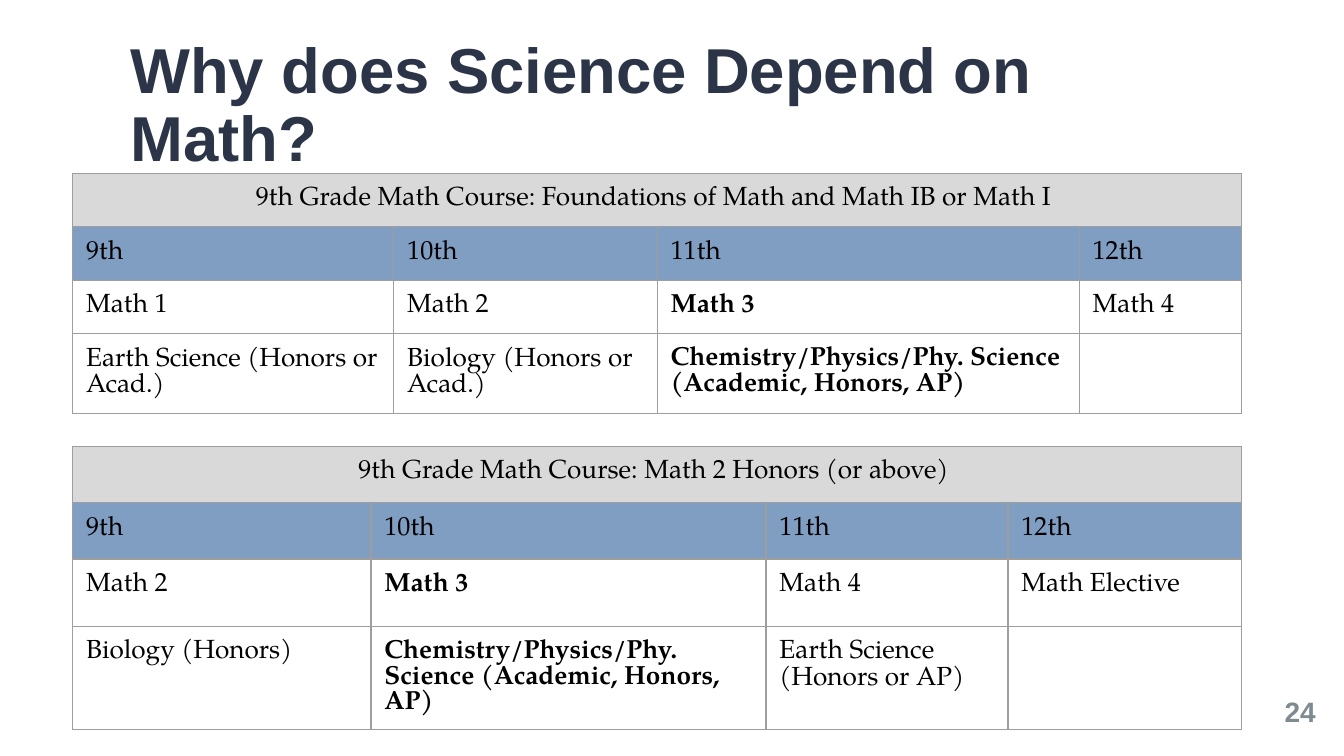
from dataclasses import dataclass

from lxml.etree import SubElement
from pptx import Presentation
from pptx.dml.color import RGBColor
from pptx.enum.text import MSO_ANCHOR, MSO_AUTO_SIZE, PP_ALIGN
from pptx.oxml.ns import qn
from pptx.util import Inches, Pt


@dataclass(frozen=True)
class Theme:
    heading_font: str = "Arial"
    table_font: str = "TeX Gyre Pagella"
    title_size: int = 34
    number_size: int = 15
    table_size: int = 14
    border_width: float = 0.75
    title: str = "2B3547"
    number: str = "7F8B91"
    text: str = "000000"
    band: str = "D9D9D9"
    grades: str = "809DC2"
    border: str = "9E9E9E"


THEME = Theme()
GRADES = ["9th", "10th", "11th", "12th"]
CHEMISTRY = "Chemistry/Physics/Phy. Science (Academic, Honors, AP)"


def add_run(p, text, font, size, color, bold=False):
    r = p.add_run()
    r.text = text
    r.font.name = font
    r.font.size = Pt(size)
    r.font.bold = bold
    r.font.color.rgb = RGBColor.from_string(color)


def prepare_frame(tf):
    tf.margin_left = tf.margin_right = tf.margin_top = tf.margin_bottom = 0
    tf.word_wrap = True
    tf.auto_size = MSO_AUTO_SIZE.NONE
    tf.vertical_anchor = MSO_ANCHOR.MIDDLE
    return tf.paragraphs[0]


def add_title(s, box, text):
    sp = s.shapes.title
    sp.left, sp.top, sp.width, sp.height = map(Inches, box)
    p = prepare_frame(sp.text_frame)
    p.alignment = PP_ALIGN.LEFT
    p.line_spacing = 0.9
    add_run(p, text, THEME.heading_font, THEME.title_size, THEME.title, True)


def add_page_number(s, box, text):
    sp = s.shapes.add_textbox(*map(Inches, box))
    p = prepare_frame(sp.text_frame)
    p.alignment = PP_ALIGN.RIGHT
    add_run(p, text, THEME.heading_font, THEME.number_size, THEME.number, True)


def add_borders(cell):
    tcPr = cell._tc.get_or_add_tcPr()
    for side in ("a:lnL", "a:lnR", "a:lnT", "a:lnB"):
        ln = SubElement(tcPr, qn(side), w=str(Pt(THEME.border_width)))
        fill = SubElement(ln, qn("a:solidFill"))
        SubElement(fill, qn("a:srgbClr"), val=THEME.border)


def format_cell(cell, text, fill=None, bold=False, align=PP_ALIGN.LEFT):
    cell.margin_left = cell.margin_right = Inches(0.1)
    cell.margin_top = cell.margin_bottom = Inches(0.1)
    add_borders(cell)
    if fill:
        cell.fill.solid()
        cell.fill.fore_color.rgb = RGBColor.from_string(fill)
    else:
        cell.fill.background()
    p = cell.text_frame.paragraphs[0]
    p.alignment = align
    if text:
        add_run(p, text, THEME.table_font, THEME.table_size, THEME.text, bold)
    else:
        p.font.size = Pt(THEME.table_size)


def add_course_table(s, left, top, widths, heights, heading, courses, bold_column):
    box = map(Inches, (left, top, sum(widths), sum(heights)))
    table = s.shapes.add_table(len(heights), len(widths), *box).table
    table.first_row = table.horz_banding = False
    for column, width in zip(table.columns, widths):
        column.width = Inches(width)
    for row, height in zip(table.rows, heights):
        row.height = Inches(height)

    table.cell(0, 0).merge(table.cell(0, len(widths) - 1))
    for i in range(len(widths)):
        text = "" if i else heading
        format_cell(table.cell(0, i), text, THEME.band, align=PP_ALIGN.CENTER)
        format_cell(table.cell(1, i), GRADES[i], THEME.grades)
    for j, row in enumerate(courses, start=2):
        for i, text in enumerate(row):
            format_cell(table.cell(j, i), text, bold=i == bold_column)


def main():
    prs = Presentation()
    prs.slide_width = Inches(10)
    prs.slide_height = prs.slide_width * 9 // 16
    s = prs.slides.add_slide(prs.slide_layouts[5])

    add_title(s, (0.97, 0.58, 7.03, 0.43), "Why does Science Depend on Math?")
    add_page_number(s, (9.19, 5.13, 0.6, 0.33), "24")
    add_course_table(
        s, 0.54, 1.29, [2.39, 1.96, 3.14, 1.21], [0.36, 0.32, 0.36, 0.55],
        "9th Grade Math Course: Foundations of Math and Math IB or Math I ",
        [["Math 1", "Math 2", "Math 3", "Math 4"],
         ["Earth Science (Honors or Acad.)", "Biology (Honors or Acad.)", CHEMISTRY, ""]],
        bold_column=2,
    )
    add_course_table(
        s, 0.54, 3.32, [2.22, 2.94, 1.8, 1.74], [0.42, 0.42, 0.5, 0.64],
        "9th Grade Math Course: Math 2 Honors (or above) ",
        [["Math 2", "Math 3", "Math 4", "Math Elective"],
         ["Biology (Honors)", CHEMISTRY, "Earth Science (Honors or AP)", ""]],
        bold_column=1,
    )
    prs.save("out.pptx")


if __name__ == "__main__":
    main()
